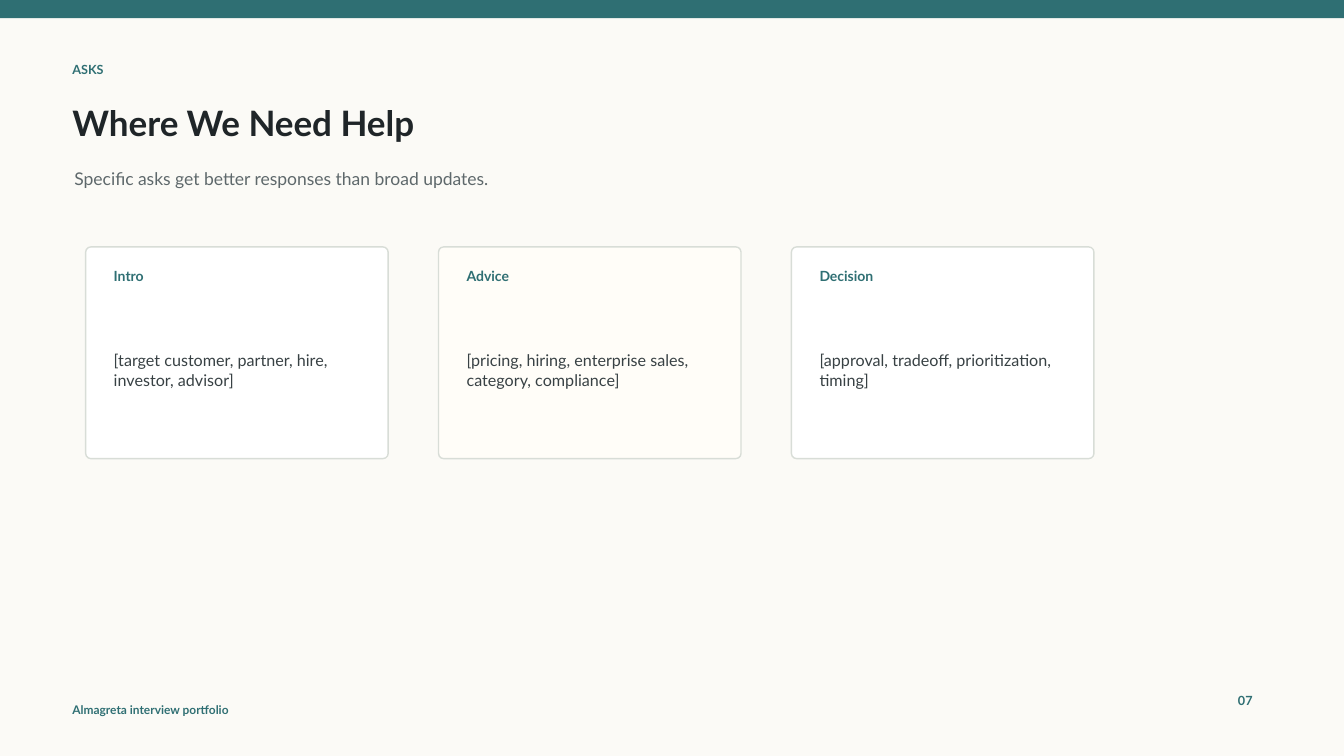
from dataclasses import dataclass

from pptx import Presentation, util as u
from pptx.dml.color import RGBColor
from pptx.enum import shapes, text

EMU_PER_PX = 9144
COLORS = {
    "paper": "FBFAF6",
    "teal": "2F6F73",
    "ink": "1F2528",
    "muted": "5E686B",
    "body": "384144",
    "border": "D8DDD7",
    "white": "FFFFFF",
    "cream": "FFFDF8",
}
FORMATS = {
    "footer": ("teal", {"size": u.Pt(8.5), "bold": True}),
    "eyebrow": ("teal", {"size": u.Pt(9), "bold": True}),
    "title": ("ink", {"size": u.Pt(25), "bold": True}),
    "subtitle": ("muted", {"size": u.Pt(12.5), "bold": False}),
    "card_label": ("teal", {"size": u.Pt(10), "bold": True}),
    "card_body": ("body", {"size": u.Pt(11.5), "bold": False}),
}
FRAME = {"word_wrap": True, "vertical_anchor": text.MSO_ANCHOR.MIDDLE}

CARD_LEFT, CARD_TOP, CARD_WIDTH, CARD_HEIGHT = 85, 245, 300, 210
CARD_STEP = 350
CARD_PAD_X, CARD_PAD_Y = 18, 16
LABEL_HEIGHT, LABEL_GAP = 25, 7


@dataclass(frozen=True)
class Box:
    left: int
    top: int
    width: int
    height: int

    def emu(self) -> list[int]:
        return [px * EMU_PER_PX for px in (self.left, self.top, self.width, self.height)]


@dataclass(frozen=True)
class Label:
    wording: str
    box: Box
    style: str


@dataclass(frozen=True)
class Ask:
    kind: str
    details: str
    fill: str


LABELS = [
    Label("Almagreta interview portfolio", Box(62, 694, 300, 20), "footer"),
    Label("07", Box(1218, 682, 50, 25), "eyebrow"),
    Label("ASKS", Box(62, 58, 480, 22), "eyebrow"),
    Label("Where We Need Help", Box(62, 94, 980, 55), "title"),
    Label("Specific asks get better responses than broad updates.",
          Box(64, 156, 1080, 42), "subtitle"),
]
ASKS = [
    Ask("Intro", "[target customer, partner, hire, investor, advisor]", "white"),
    Ask("Advice", "[pricing, hiring, enterprise sales, category, compliance]", "cream"),
    Ask("Decision", "[approval, tradeoff, prioritization, timing]", "white"),
]


def rgb(name: str) -> RGBColor:
    return RGBColor.from_string(COLORS[name])


def draw_label(slide, label: Label) -> None:
    frame = slide.shapes.add_textbox(*label.box.emu()).text_frame
    for key, value in FRAME.items():
        setattr(frame, key, value)
    run = frame.paragraphs[0].add_run()
    run.text = label.wording
    color, font_format = FORMATS[label.style]
    run.font.color.rgb = rgb(color)
    for key, value in {"name": "Lato", **font_format}.items():
        setattr(run.font, key, value)


def draw_panel(slide, kind: shapes.MSO_SHAPE, box: Box, fill: str):
    panel = slide.shapes.add_shape(kind, *box.emu())
    panel.shadow.inherit = False
    panel.fill.solid()
    panel.fill.fore_color.rgb = rgb(fill)
    panel.line.fill.background()
    return panel


def draw_ask(slide, ask: Ask, left: int) -> None:
    card = draw_panel(slide, shapes.MSO_SHAPE.ROUNDED_RECTANGLE,
                      Box(left, CARD_TOP, CARD_WIDTH, CARD_HEIGHT), ask.fill)
    card.adjustments[0] = 0.024
    card.line.color.rgb = rgb("border")
    card.line.width = u.Pt(1)

    inner_left = left + CARD_PAD_X
    inner_width = CARD_WIDTH - 2 * CARD_PAD_X
    label_top = CARD_TOP + CARD_PAD_Y
    body_top = label_top + LABEL_HEIGHT + LABEL_GAP
    body_height = CARD_TOP + CARD_HEIGHT - CARD_PAD_Y - body_top + 2
    draw_label(slide, Label(ask.kind, Box(inner_left, label_top, inner_width, LABEL_HEIGHT),
                            "card_label"))
    draw_label(slide, Label(ask.details, Box(inner_left, body_top, inner_width, body_height),
                            "card_body"))


def main() -> None:
    deck = Presentation()
    deck.slide_width, deck.slide_height = u.Inches(13.33), u.Inches(7.5)
    slide = deck.slides.add_slide(deck.slide_layouts[6])
    slide.background.fill.solid()
    slide.background.fill.fore_color.rgb = rgb("paper")

    draw_panel(slide, shapes.MSO_SHAPE.RECTANGLE, Box(0, 0, 1333, 18), "teal")
    for label in LABELS:
        draw_label(slide, label)
    for column, ask in enumerate(ASKS):
        draw_ask(slide, ask, CARD_LEFT + column * CARD_STEP)

    deck.save("out.pptx")


if __name__ == "__main__":
    main()
